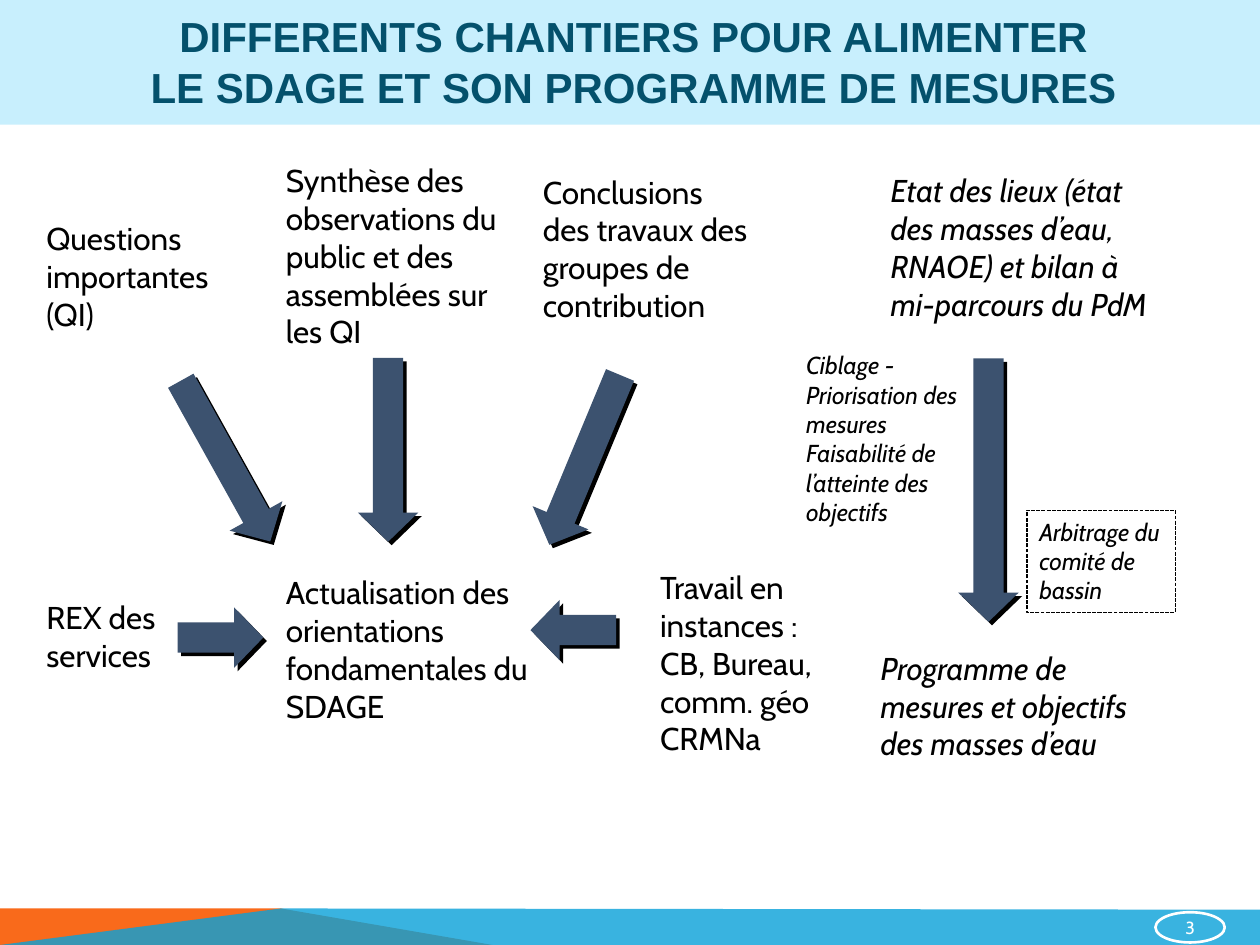
"""Build the slide on the workstreams that feed the SDAGE and its programme."""
from lxml.etree import SubElement as Sub
from pptx import Presentation
from pptx.dml.color import RGBColor as RGB
from pptx.enum.dml import MSO_LINE as Dash
from pptx.enum.shapes import MSO_SHAPE as Kind
from pptx.enum.text import MSO_ANCHOR as Anchor, PP_ALIGN as Align
from pptx.oxml.ns import qn
from pptx.util import Inches, Pt

BLACK = RGB(0x00, 0x00, 0x00)
WHITE = RGB(0xFF, 0xFF, 0xFF)
ORANGE = RGB(0xF9, 0x6A, 0x1B)
BLUE = RGB(0x08, 0xA1, 0xD9)
PALE = RGB(0xC8, 0xEF, 0xFD)
TEAL = RGB(0x04, 0x51, 0x6C)
SLATE = RGB(0x3C, 0x52, 0x6F)


def paint(shape, color):
    shape.shadow.inherit = False
    shape.fill.solid()
    shape.fill.fore_color.rgb = color
    shape.line.fill.background()


def write(shape, lines, size, color=BLACK, font="Cabin", bold=False,
          slant=False, align=Align.LEFT, anchor=Anchor.TOP):
    frame = shape.text_frame
    frame.word_wrap = True
    frame.vertical_anchor = anchor
    for i, line in enumerate(lines):
        para = frame.add_paragraph() if i else frame.paragraphs[0]
        para.alignment = align
        run = para.add_run()
        run.text = line
        run.font.name = font
        run.font.size = Pt(size)
        run.font.bold = bold
        run.font.italic = slant
        run.font.color.rgb = color


deck = Presentation()
deck.slide_width = Inches(10)
deck.slide_height = Inches(7.5)
slide = deck.slides.add_slide(deck.slide_layouts[6])
shapes = slide.shapes

bands = [
    (ORANGE, 100, [(0, 7.5), (0, 7.21), (2.23, 7.21), (3.91, 7.5)]),
    (BLUE, 80, [(0, 7.5), (2.23, 7.21), (10, 7.22), (10, 7.5)]),
]
for color, alpha, points in bands:
    spots = [(Inches(x), Inches(y)) for x, y in points]
    pen = shapes.build_freeform(*spots[0])
    pen.add_line_segments(spots[1:], close=True)
    band = pen.convert_to_shape()
    paint(band, color)
    if alpha < 100:
        tint = band._element.spPr.find(qn("a:solidFill"))[0]
        Sub(tint, qn("a:alpha"), val=str(alpha * 1000))

head = shapes.add_shape(Kind.RECTANGLE, 0, 0, Inches(10), Inches(0.99))
paint(head, PALE)

badge = shapes.add_shape(Kind.OVAL, Inches(9.17), Inches(7.24), Inches(0.55), Inches(0.24))
badge.shadow.inherit = False
badge.fill.background()
badge.line.color.rgb = WHITE
badge.line.width = Pt(1.5)
frame = badge.text_frame
frame.margin_left = frame.margin_right = Inches(0.01)
frame.margin_top = frame.margin_bottom = Inches(0.01)
write(badge, ["3"], 10, WHITE, align=Align.CENTER, anchor=Anchor.MIDDLE)

title = shapes.add_textbox(Inches(0.35), Inches(0.13), Inches(9.45), Inches(0.71))
write(title, ["DIFFERENTS CHANTIERS POUR ALIMENTER ", "LE SDAGE ET SON PROGRAMME DE MESURES "],
      24, TEAL, "Arial", bold=True, align=Align.CENTER, anchor=Anchor.MIDDLE)

arrows = [
    (2.35, 3.33, 1.46, 90, 0.5),
    (1.06, 3.42, 1.46, 60.9, 0.48),
    (3.91, 3.41, 1.46, 112.6, 0.5),
    (6.8, 3.65, 2.09, 90, 0.5),
    (1.41, 4.82, 0.68, 0, 0.5),
    (4.21, 4.76, 0.68, 180, 0.5),
]
for x, y, length, turn, shaft in arrows:
    arrow = shapes.add_shape(Kind.RIGHT_ARROW, Inches(x), Inches(y), Inches(length), Inches(0.48))
    arrow.adjustments[0] = shaft
    arrow.adjustments[1] = 0.483
    arrow.rotation = turn
    paint(arrow, SLATE)
    effects = arrow._element.spPr.find(qn("a:effectLst"))
    shade = Sub(effects, qn("a:outerShdw"), dist=str(Pt(2.8)), dir="2700000",
                algn="ctr", rotWithShape="0")
    Sub(shade, qn("a:srgbClr"), val=str(BLACK))

notes = [
    (0.27, 1.69, 1.73, 1.01, 18, False, ["Questions importantes (QI)"]),
    (2.17, 1.23, 1.97, 1.62, 18, False,
     ["Synthèse des observations du public et des assemblées sur les QI"]),
    (4.21, 1.32, 1.89, 1.31, 18, False, ["Conclusions des travaux des groupes de contribution"]),
    (2.17, 4.5, 2.2, 1.31, 18, False, ["Actualisation des orientations fondamentales du SDAGE"]),
    (6.97, 1.31, 2.36, 1.31, 18, True,
     ["Etat des lieux (état des masses d’eau, RNAOE) et bilan à mi-parcours du PdM"]),
    (6.89, 5.1, 2.36, 1.01, 18, True, ["Programme de mesures et objectifs des masses d’eau"]),
    (0.27, 4.7, 1.14, 0.71, 18, False, ["REX des services"]),
    (6.3, 2.73, 1.4, 1.51, 14, True,
     ["Ciblage - Priorisation des mesures Faisabilité de l’atteinte des objectifs"]),
    (5.14, 4.46, 1.59, 1.62, 18, False,
     ["Travail en instances : CB, Bureau, comm. géo", "CRMNa"]),
]
for x, y, width, height, size, slant, lines in notes:
    note = shapes.add_textbox(Inches(x), Inches(y), Inches(width), Inches(height))
    write(note, lines, size, slant=slant)

choice = shapes.add_shape(Kind.RECTANGLE, Inches(8.15), Inches(4.05), Inches(1.18), Inches(0.81))
paint(choice, WHITE)
choice.line.color.rgb = BLACK
choice.line.width = Pt(0.75)
choice.line.dash_style = Dash.SQUARE_DOT
write(choice, ["Arbitrage du comité de bassin"], 14, slant=True)

deck.save("out.pptx")
